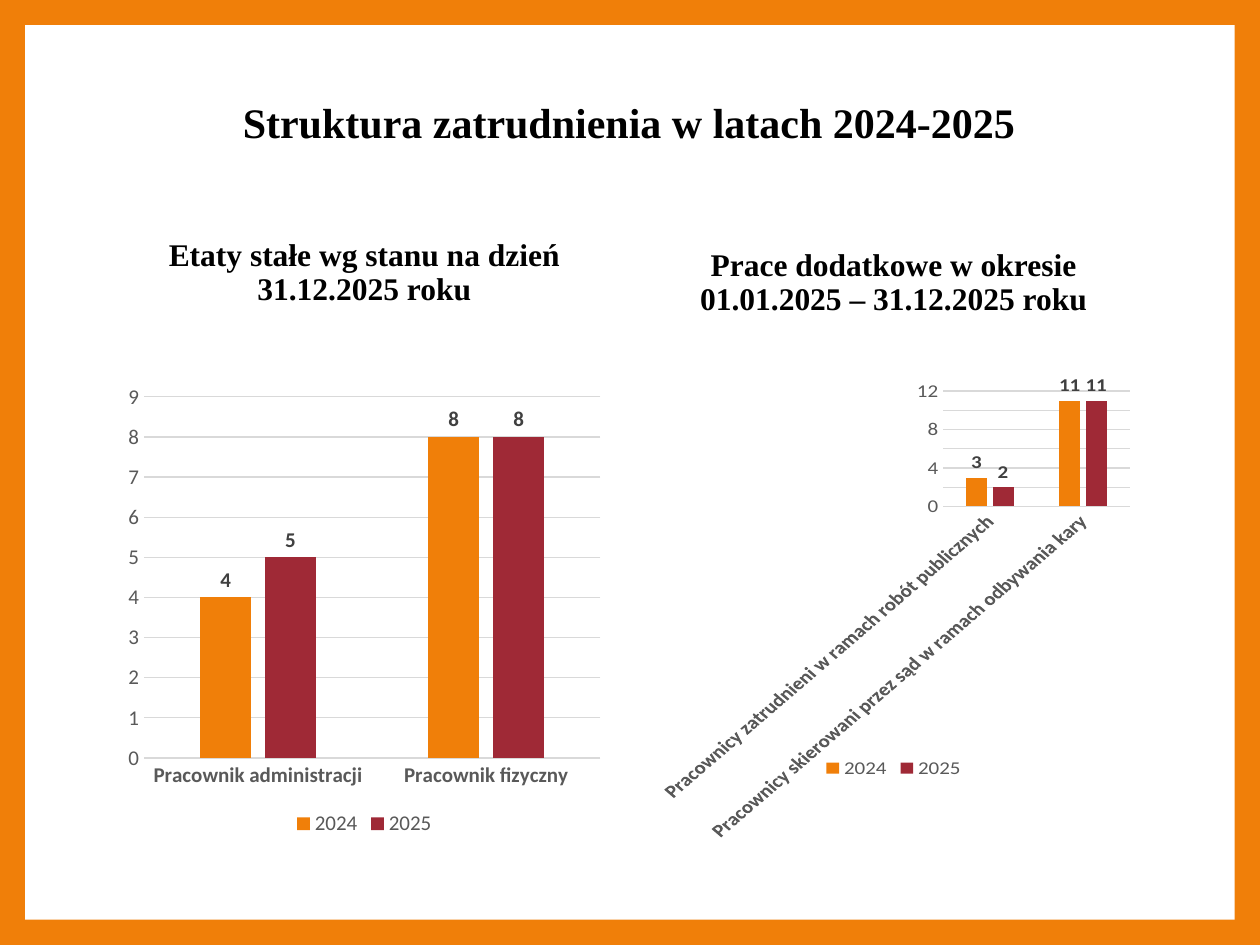
from dataclasses import dataclass

import lxml.etree
import pptx
import pptx.chart.data
import pptx.dml.color
import pptx.enum.chart
import pptx.enum.shapes
import pptx.enum.text
import pptx.util

Cm = pptx.util.Cm
Pt = pptx.util.Pt


def rgb(value):
    return pptx.dml.color.RGBColor.from_string(value)


@dataclass(frozen=True)
class Theme:
    orange: str = "F07F09"
    red: str = "9F2936"
    white: str = "FFFFFF"
    black: str = "000000"
    axis_text: str = "595959"
    label_text: str = "404040"
    grid: str = "D9D9D9"
    heading_font: str = "Times New Roman"
    chart_font: str = "Calibri"
    title_size: int = 24
    heading_size: int = 18
    chart_size: int = 12
    hairline: float = 0.75


class SlideBuilder:
    def __init__(self, page, theme):
        self.page = page
        self.theme = theme

    def background(self, color):
        fill = self.page.background.fill
        fill.solid()
        fill.fore_color.rgb = rgb(color)

    def panel(self, left, top, width, height):
        panel = self.page.shapes.add_shape(
            pptx.enum.shapes.MSO_SHAPE.RECTANGLE, Cm(left), Cm(top), Cm(width), Cm(height))
        panel.shadow.inherit = False
        panel.fill.solid()
        panel.fill.fore_color.rgb = rgb(self.theme.white)
        panel.line.fill.background()

    def heading(self, text, size, left, top, width, height):
        box = self.page.shapes.add_textbox(Cm(left), Cm(top), Cm(width), Cm(height))
        frame = box.text_frame
        frame.word_wrap = True
        frame.vertical_anchor = pptx.enum.text.MSO_ANCHOR.MIDDLE
        para = frame.paragraphs[0]
        para.alignment = pptx.enum.text.PP_ALIGN.CENTER
        para.line_spacing = 0.9
        span = para.add_run()
        span.text = text
        self.style_font(span.font, size, self.theme.black, self.theme.heading_font, True)

    def style_font(self, font, size, color, name, bold=False):
        font.size = Pt(size)
        font.name = name
        font.bold = bold
        font.color.rgb = rgb(color)

    def chart_text(self, font, color, bold=False):
        self.style_font(font, self.theme.chart_size, color, self.theme.chart_font, bold)

    def hairline(self, line):
        line.color.rgb = rgb(self.theme.grid)
        line.width = Pt(self.theme.hairline)

    def column_chart(self, categories, series, left, top, width, height):
        theme = self.theme
        data = pptx.chart.data.CategoryChartData()
        data.categories = categories
        for name, values in series.items():
            data.add_series(name, values)
        chart = self.page.shapes.add_chart(
            pptx.enum.chart.XL_CHART_TYPE.COLUMN_CLUSTERED,
            Cm(left), Cm(top), Cm(width), Cm(height), data).chart
        self.style_font(chart.font, 10, theme.black, theme.chart_font)
        chart.has_title = False
        chart.has_legend = True
        chart.legend.position = pptx.enum.chart.XL_LEGEND_POSITION.BOTTOM
        chart.legend.include_in_layout = False
        self.chart_text(chart.legend.font, theme.axis_text)

        for axis, bold in ((chart.category_axis, True), (chart.value_axis, False)):
            axis.major_tick_mark = pptx.enum.chart.XL_TICK_MARK.NONE
            axis.minor_tick_mark = pptx.enum.chart.XL_TICK_MARK.NONE
            self.chart_text(axis.tick_labels.font, theme.axis_text, bold)
        self.hairline(chart.category_axis.format.line)
        chart.value_axis.format.line.fill.background()
        chart.value_axis.has_major_gridlines = True
        self.hairline(chart.value_axis.major_gridlines.format.line)

        plot = chart.plots[0]
        plot.gap_width = 219
        plot.overlap = -27
        plot.vary_by_categories = False
        for columns, color in zip(plot.series, (theme.orange, theme.red)):
            columns.invert_if_negative = False
            columns.format.fill.solid()
            columns.format.fill.fore_color.rgb = rgb(color)
            labels = columns.data_labels
            labels.show_value = True
            labels.position = pptx.enum.chart.XL_LABEL_POSITION.OUTSIDE_END
            self.chart_text(labels.font, theme.label_text, True)


def main():
    theme = Theme()
    deck = pptx.Presentation()
    deck.slide_width = Cm(25.4)
    deck.slide_height = Cm(19.05)
    page = deck.slides.add_slide(deck.slide_layouts[6])
    builder = SlideBuilder(page, theme)

    margin = 0.51
    builder.background(theme.orange)
    builder.panel(margin, margin, 25.4 - 2 * margin, 19.05 - 2 * margin)

    left, right, column = 2.39, 13.06, 9.91
    builder.heading("Struktura zatrudnienia w latach 2024-2025", theme.title_size,
                    left, 1.7, right + column - left, 1.63)
    sections = [
        (left, 4.11, "Etaty stałe wg stanu na dzień 31.12.2025 roku",
         ["Pracownik administracji", "Pracownik fizyczny"],
         {"2024": (4, 8), "2025": (5, 8)}),
        (right, 4.52, "Prace dodatkowe w okresie 01.01.2025 – 31.12.2025 roku",
         ["Pracownicy zatrudnieni w ramach robót publicznych",
          "Pracownicy skierowani przez sąd w ramach odbywania kary"],
         {"2024": (3, 11), "2025": (2, 11)}),
    ]
    heading_bottom = 6.9
    for start, top, text, categories, series in sections:
        builder.heading(text, theme.heading_size, start, top, column, heading_bottom - top)
        builder.column_chart(categories, series, start, 7.56, column, 9.4)

    deck.save("out.pptx")


if __name__ == "__main__":
    main()
